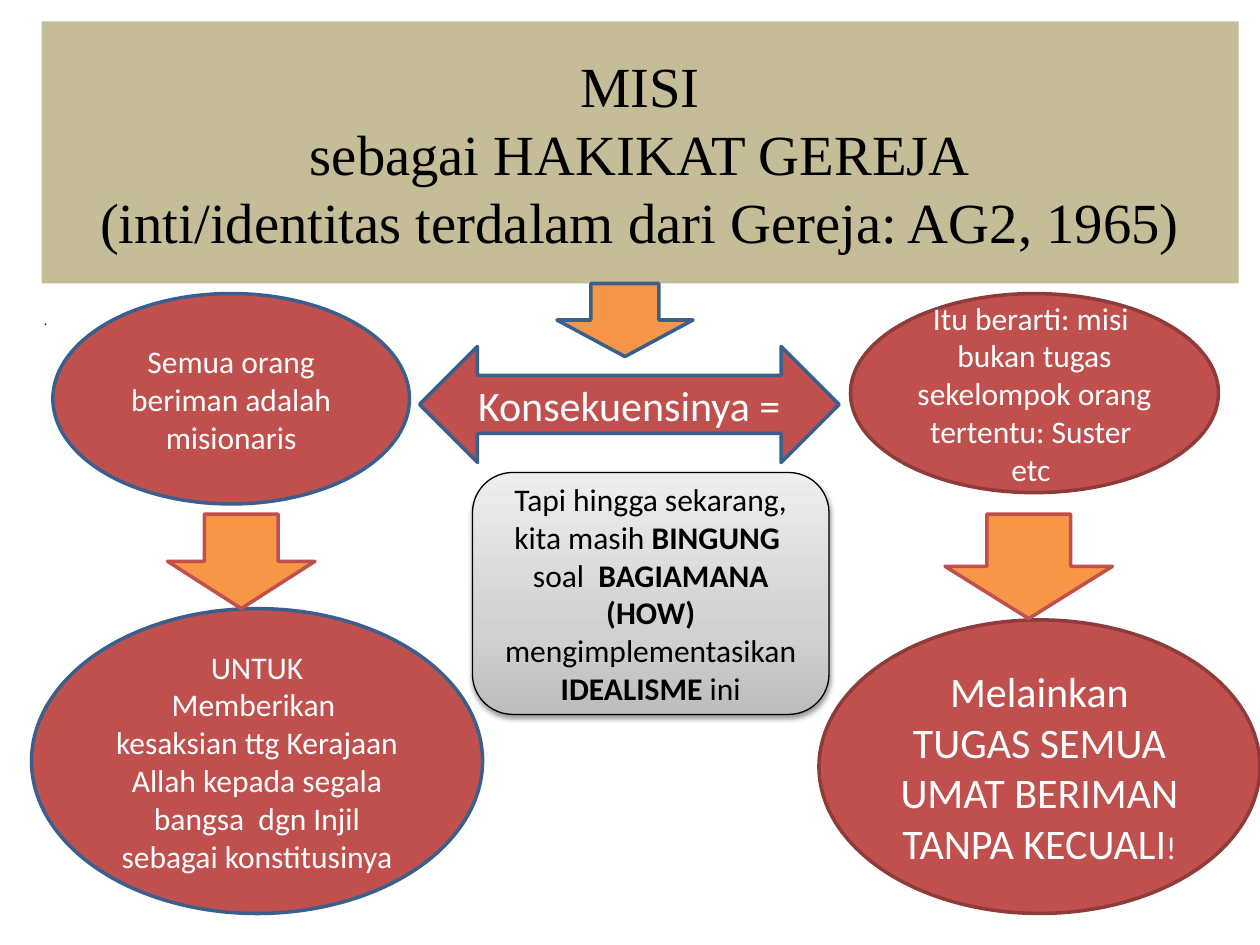
from copy import deepcopy

from lxml.etree import SubElement
from pptx import Presentation
from pptx.dml.color import RGBColor
from pptx.enum.shapes import MSO_SHAPE
from pptx.enum.text import MSO_ANCHOR, MSO_AUTO_SIZE, PP_ALIGN
from pptx.oxml.ns import qn
from pptx.util import Inches, Pt

COLORS = {
    "banner": "C4BD97", "red": "C0504D", "orange": "F79646",
    "blue_line": "3A5F8C", "dark_red_line": "8E3B39",
    "black": "000000", "white": "FFFFFF",
}
NOTE_GRADIENT = [(0, "BDBDBD"), (0.35, "D1D1D1"), (1, "EEEEEE")]


def rgb(name):
    """Return the palette colour called name."""
    return RGBColor.from_string(COLORS[name])


def place(part, box):
    """Move a placeholder to a box given in inches."""
    part.left, part.top, part.width, part.height = map(Inches, box)


def format_paragraph(paragraph, size, color, font="Calibri"):
    """Set the font shared by the runs of a paragraph."""
    paragraph.font.size = Pt(size)
    paragraph.font.name = font
    paragraph.font.color.rgb = rgb(color)


def add_title(slide, box, lines):
    """Fill the title placeholder as a coloured banner."""
    title = slide.shapes.title
    place(title, box)
    title.fill.solid()
    title.fill.fore_color.rgb = rgb("banner")
    frame = title.text_frame
    frame.auto_size = MSO_AUTO_SIZE.NONE
    frame.vertical_anchor = MSO_ANCHOR.MIDDLE
    frame.text = "\v".join(lines)
    frame.paragraphs[0].alignment = PP_ALIGN.CENTER
    format_paragraph(frame.paragraphs[0], 32.4, "black", "Times New Roman")


def add_body(slide, box, text):
    """Fill the body placeholder with small unbulleted italic text."""
    body = slide.placeholders[1]
    place(body, box)
    body.text_frame.text = text
    paragraph = body.text_frame.paragraphs[0]
    format_paragraph(paragraph, 8, "black")
    paragraph.font.italic = True
    properties = paragraph._p.get_or_add_pPr()
    properties.set("marL", str(Inches(0.38)))
    properties.set("indent", str(-Inches(0.38)))
    properties.insert(0, properties.makeelement(qn("a:buNone")))


def add_block(slide, kind, box, fill, line, paragraphs=(), size=18, color="white", line_width=2):
    """Add a preset shape with centred paragraphs, each a list of (text, bold) runs."""
    block = slide.shapes.add_shape(kind, *map(Inches, box))
    block.shadow.inherit = False
    block.fill.solid()
    block.fill.fore_color.rgb = rgb(fill)
    block.line.color.rgb = rgb(line)
    block.line.width = Pt(line_width)
    frame = block.text_frame
    frame.word_wrap = True
    frame.vertical_anchor = MSO_ANCHOR.MIDDLE
    for index, runs in enumerate(paragraphs):
        paragraph = frame.add_paragraph() if index else frame.paragraphs[0]
        paragraph.alignment = PP_ALIGN.CENTER
        format_paragraph(paragraph, size, color)
        for text, bold in runs:
            run = paragraph.add_run()
            run.text = text
            if bold:
                run.font.bold = True
    return block


def add_ellipse(slide, box, line, texts, size=18):
    """Add a red ellipse with one plain paragraph for each text."""
    paragraphs = [[(text, False)] for text in texts]
    return add_block(slide, MSO_SHAPE.OVAL, box, "red", line, paragraphs, size)


def add_down_arrow(slide, box, line):
    """Add an orange arrow pointing down."""
    return add_block(slide, MSO_SHAPE.DOWN_ARROW, box, "orange", line)


def add_note(slide, box, paragraphs):
    """Add the rounded grey note with a gradient and a soft shadow."""
    note = add_block(slide, MSO_SHAPE.ROUNDED_RECTANGLE, box, "white", "black",
                     paragraphs, color="black", line_width=0.75)
    note.fill.gradient()
    note.fill.gradient_angle = 90
    stop_list = note._element.spPr.find(qn("a:gradFill")).find(qn("a:gsLst"))
    stop_list.insert(1, deepcopy(stop_list[0]))
    for stop, (position, color) in zip(note.fill.gradient_stops, NOTE_GRADIENT):
        stop.position = position
        stop.color.rgb = RGBColor.from_string(color)
    effects = note._element.spPr.find(qn("a:effectLst"))
    shadow = SubElement(effects, qn("a:outerShdw"), blurRad=str(Pt(3.1)),
                        dist=str(Pt(1.6)), dir="5400000", rotWithShape="0")
    shadow_color = SubElement(shadow, qn("a:srgbClr"), val=COLORS["black"])
    SubElement(shadow_color, qn("a:alpha"), val="38000")


def main():
    """Build the slide and save it."""
    deck = Presentation()
    deck.slide_width, deck.slide_height = Inches(10), Inches(7.5)
    slide = deck.slides.add_slide(deck.slide_layouts[1])

    add_title(slide, (0.33, 0.17, 9.5, 2.08), [
        "MISI", "sebagai HAKIKAT GEREJA",
        "(inti/identitas terdalam dari Gereja: AG2, 1965)"])
    add_body(slide, (0.25, 2.42, 9.25, 4.75), ".")

    add_ellipse(slide, (0.42, 2.33, 2.83, 1.67), "blue_line",
                ["Semua orang beriman adalah misionaris"])
    add_ellipse(slide, (0.25, 4.83, 3.58, 2.42), "blue_line", [
        "UNTUK",
        "Memberikan  kesaksian ttg Kerajaan Allah kepada segala bangsa  dgn Injil sebagai konstitusinya"])
    add_ellipse(slide, (6.75, 2.33, 2.92, 1.58), "dark_red_line",
                ["Itu berarti: misi  bukan tugas sekelompok orang tertentu: Suster  etc "])
    duty = add_ellipse(slide, (6.5, 4.92, 3.5, 2.33), "dark_red_line",
                       ["Melainkan", "TUGAS SEMUA UMAT BERIMAN TANPA KECUALI"], 24)
    exclamation = duty.text_frame.paragraphs[1].add_run()
    exclamation.text = "!"
    exclamation.font.size = Pt(18)

    add_down_arrow(slide, (1.33, 4.08, 1.17, 0.75), "red")
    add_down_arrow(slide, (7.5, 4.08, 1.33, 0.83), "red")
    add_block(slide, MSO_SHAPE.LEFT_RIGHT_ARROW, (3.33, 2.75, 3.33, 0.92), "red", "blue_line",
              [[("Konsekuensinya =", False)]], 24)
    add_note(slide, (3.75, 3.75, 2.83, 1.92), [
        [("Tapi hingga sekarang, kita masih ", False), ("BINGUNG  ", True), ("soal  ", False),
         ("BAGIAMANA (HOW) ", True), ("mengimplementasikan", False)],
        [("IDEALISME ", True), ("ini", False)]])
    add_down_arrow(slide, (4.42, 2.25, 1.08, 0.58), "blue_line")

    deck.save("out.pptx")


if __name__ == "__main__":
    main()
